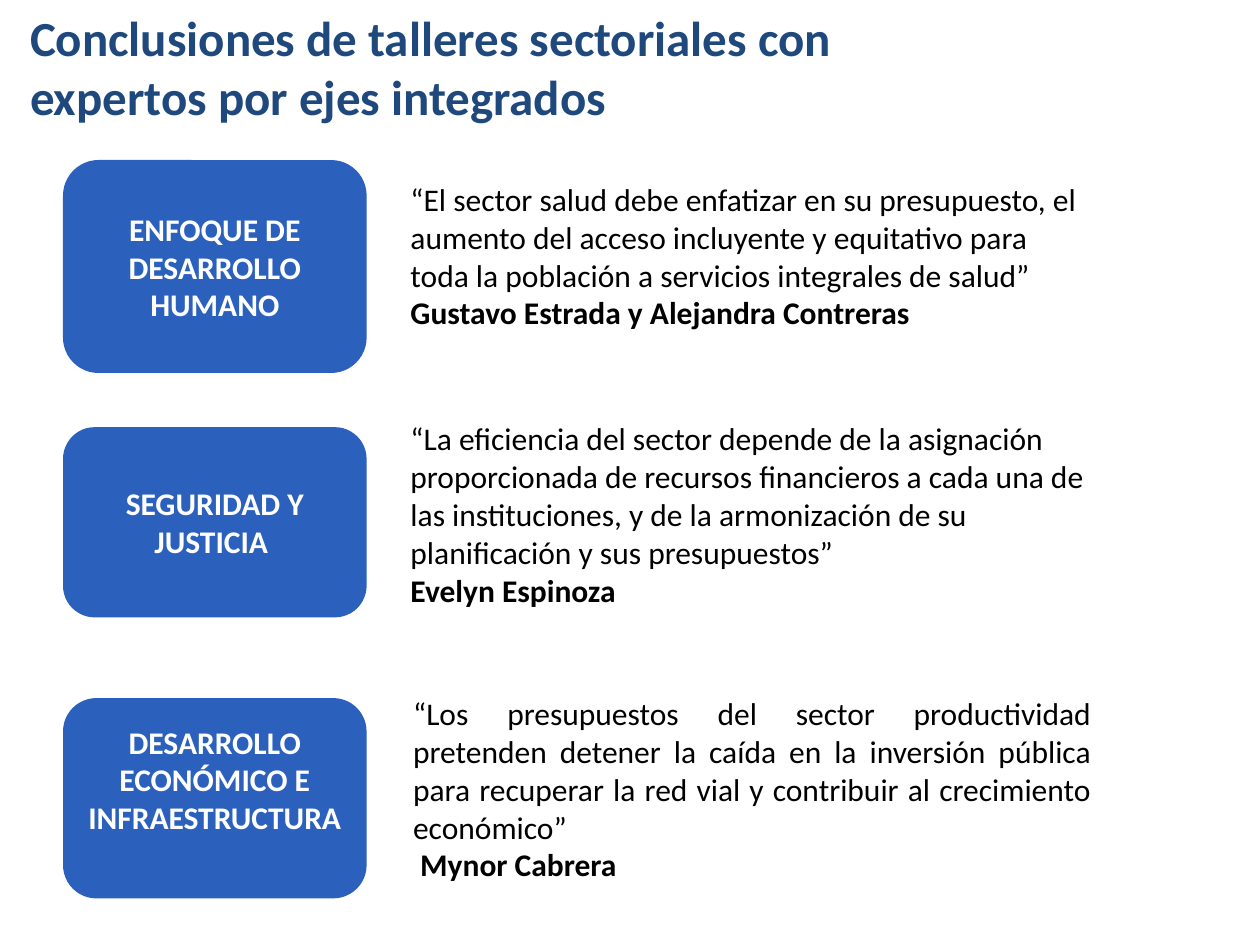
"""Build the slide of workshop conclusions by integrated axis."""
from pptx import Presentation
from pptx.dml.color import RGBColor
from pptx.enum.shapes import MSO_SHAPE
from pptx.enum.text import MSO_ANCHOR, PP_ALIGN
from pptx.util import Inches, Pt

ROUNDED = MSO_SHAPE.ROUNDED_RECTANGLE
TOP, MIDDLE = MSO_ANCHOR.TOP, MSO_ANCHOR.MIDDLE
LEFT, CENTER, JUSTIFY = PP_ALIGN.LEFT, PP_ALIGN.CENTER, PP_ALIGN.JUSTIFY

COLORS = {"title": "1F497D", "axis": "2B61BD", "label": "FFFFFF", "quote": "000000"}
FONT = "Calibri"
WIDTH, HEIGHT = 10, 7.5
AXIS_LEFT, AXIS_WIDTH = 0.5, 2.41
QUOTE_RIGHT = 8.76

TITLE = "Conclusiones de talleres sectoriales con expertos por ejes integrados"
AXES = [
    {
        "label": "ENFOQUE DE DESARROLLO HUMANO",
        "top": 1.27, "height": 1.69, "bottom_inset": 0.05,
        "quote": "“El sector salud debe enfatizar en su presupuesto, el aumento del acceso "
                 "incluyente y equitativo para toda la población a servicios integrales de salud”",
        "author": "Gustavo Estrada y Alejandra Contreras",
        "quote_left": 3.16, "quote_top": 1.38, "quote_height": 1.31,
        "align": LEFT, "indent": 0,
    },
    {
        "label": "SEGURIDAD Y JUSTICIA ",
        "top": 3.39, "height": 1.51, "bottom_inset": 0.05,
        "quote": "“La eficiencia del sector depende de la asignación proporcionada de recursos "
                 "financieros a cada una de las instituciones, y de la armonización de su "
                 "planificación y sus presupuestos”",
        "author": "Evelyn Espinoza",
        "quote_left": 3.16, "quote_top": 3.28, "quote_height": 1.62,
        "align": LEFT, "indent": 0,
    },
    {
        "label": "DESARROLLO ECONÓMICO E INFRAESTRUCTURA",
        "top": 5.54, "height": 1.59, "bottom_inset": 0.35,
        "quote": "“Los presupuestos del sector productividad pretenden detener la caída en la "
                 "inversión pública para recuperar la red vial y contribuir al crecimiento "
                 "económico”",
        "author": " Mynor Cabrera",
        "quote_left": 2.74, "quote_top": 5.46, "quote_height": 1.62,
        "align": JUSTIFY, "indent": 0.44,
    },
]


def write(box, lines, size, color, align=LEFT, anchor=TOP, indent=0):
    """Fill a box with one paragraph for each (text, bold) line."""
    frame = box.text_frame
    frame.word_wrap = True
    frame.vertical_anchor = anchor
    for index, (text, bold) in enumerate(lines):
        para = frame.add_paragraph() if index else frame.paragraphs[0]
        para.alignment = align
        if indent:
            properties = para._p.get_or_add_pPr()
            properties.set("marL", str(Inches(indent)))
            properties.set("indent", "0")
        span = para.add_run()
        span.text = text
        span.font.name = FONT
        span.font.size = Pt(size)
        span.font.bold = bold
        span.font.color.rgb = RGBColor.from_string(COLORS[color])


def add_axis(page, axis):
    """Draw one axis: its rounded label and the experts' quote."""
    shape = page.shapes.add_shape(
        ROUNDED, *map(Inches, (AXIS_LEFT, axis["top"], AXIS_WIDTH, axis["height"])))
    shape.shadow.inherit = False
    shape.fill.solid()
    shape.fill.fore_color.rgb = RGBColor.from_string(COLORS["axis"])
    shape.line.fill.background()
    shape.text_frame.margin_bottom = Inches(axis["bottom_inset"])
    write(shape, [(axis["label"], True)], 18, "label", CENTER, MIDDLE)

    left = axis["quote_left"]
    box = page.shapes.add_textbox(
        *map(Inches, (left, axis["quote_top"], QUOTE_RIGHT - left, axis["quote_height"])))
    write(box, [(axis["quote"], False), (axis["author"], True)], 18, "quote",
          axis["align"], indent=axis["indent"])


def main():
    """Assemble and save the deck."""
    deck = Presentation()
    deck.slide_width, deck.slide_height = Inches(WIDTH), Inches(HEIGHT)
    page = deck.slides.add_slide(deck.slide_layouts[6])
    title = page.shapes.add_textbox(*map(Inches, (0.14, 0, 7.76, 1.05)))
    write(title, [(TITLE, True)], 28, "title", anchor=MIDDLE)
    for axis in AXES:
        add_axis(page, axis)
    deck.save("out.pptx")


if __name__ == "__main__":
    main()
